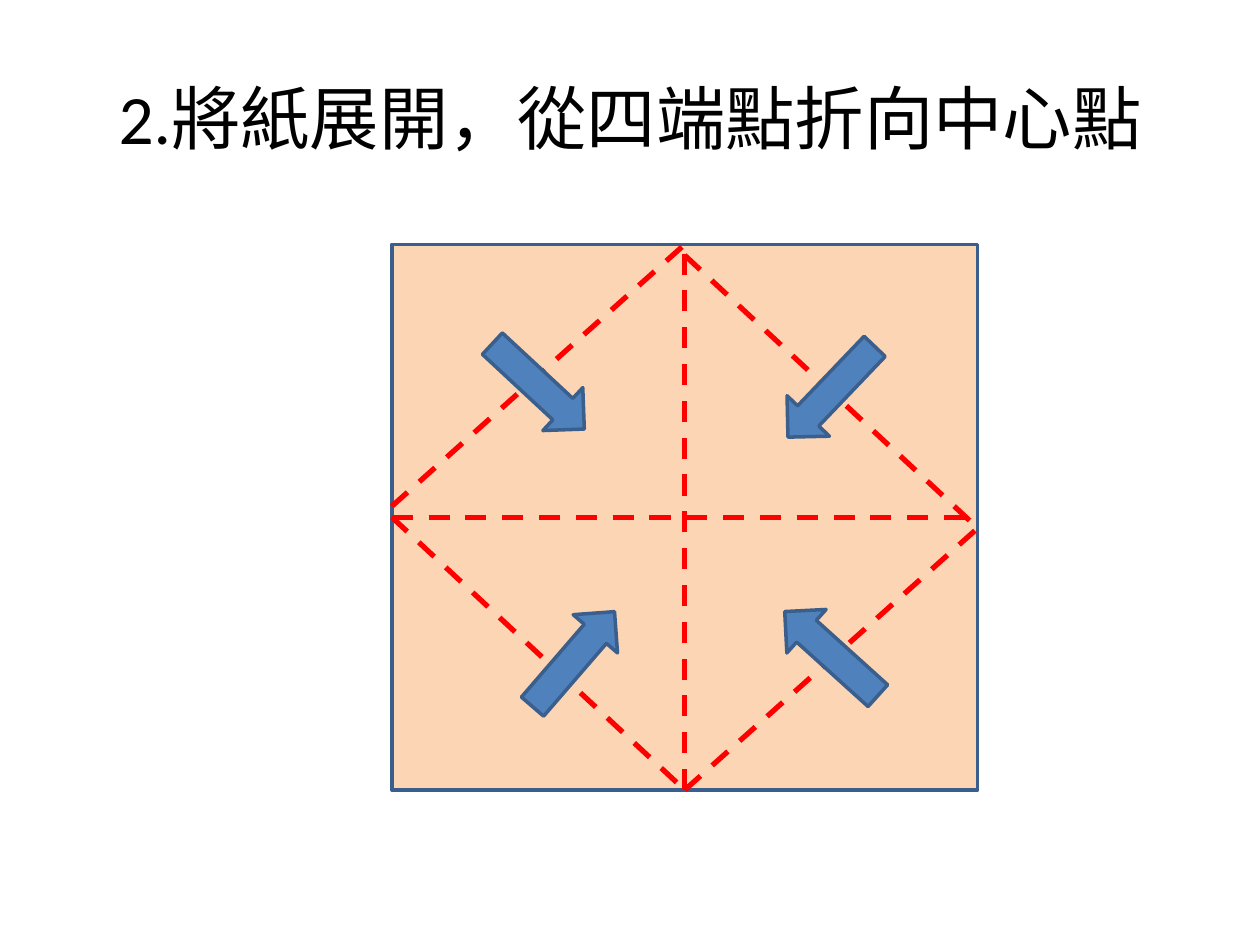
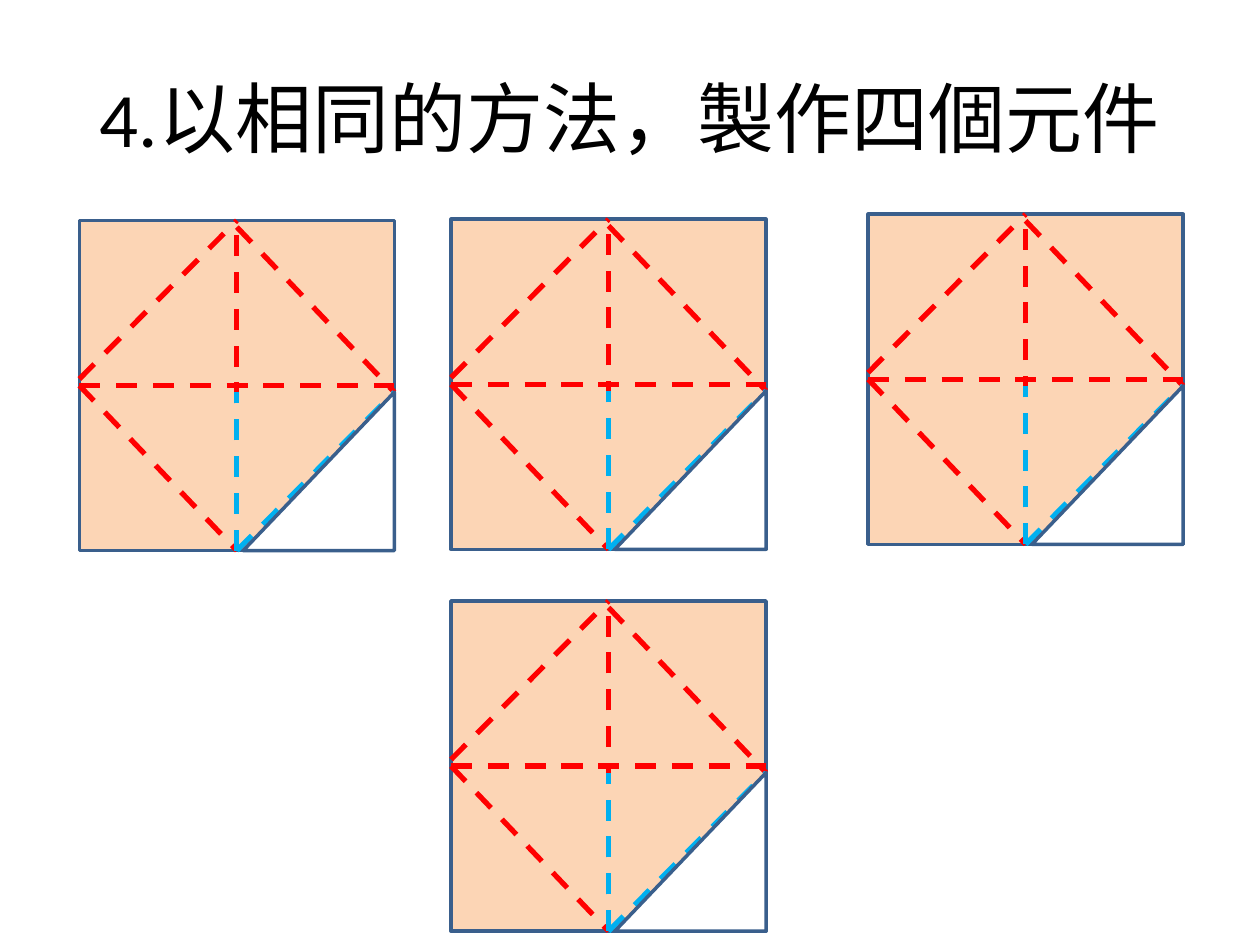
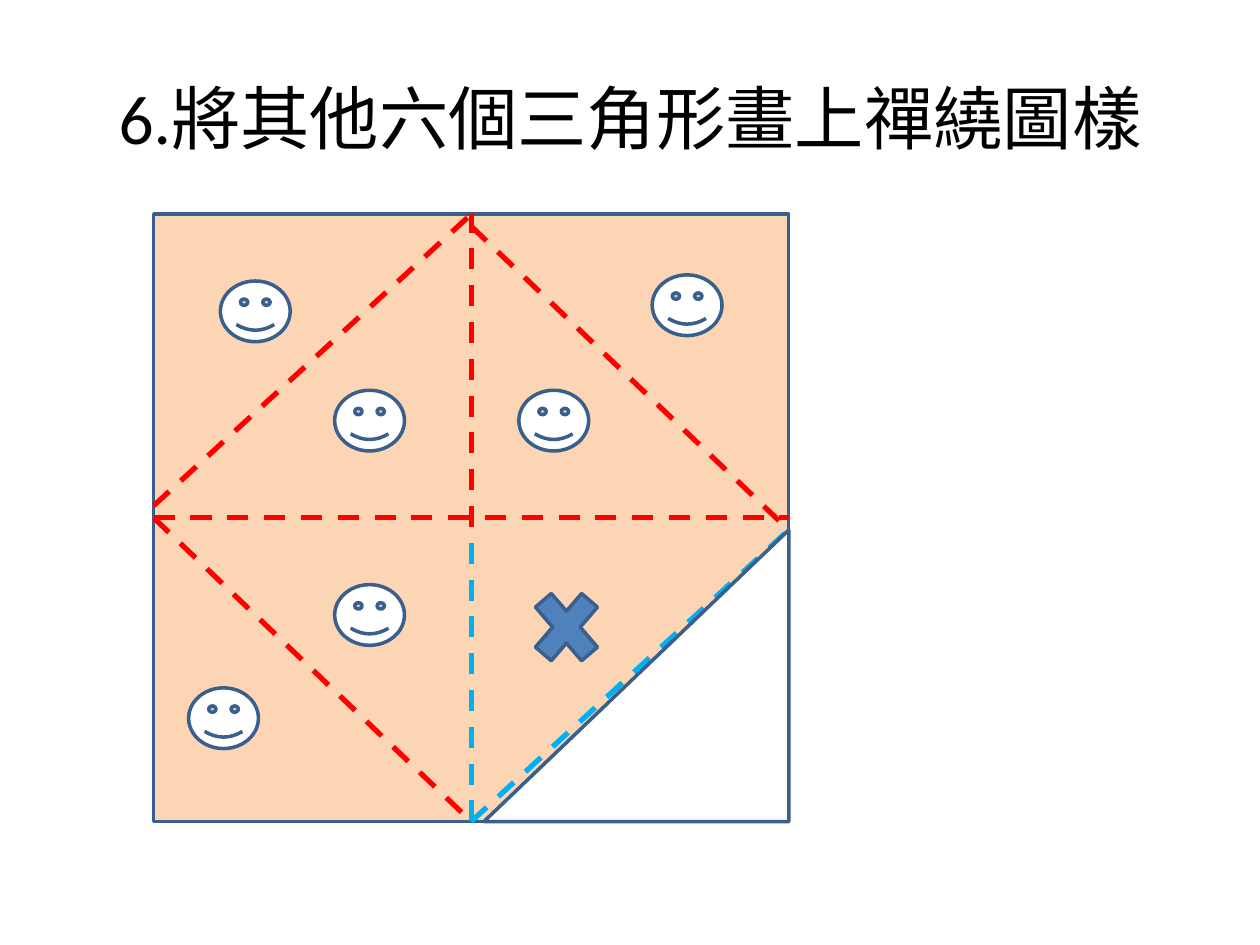
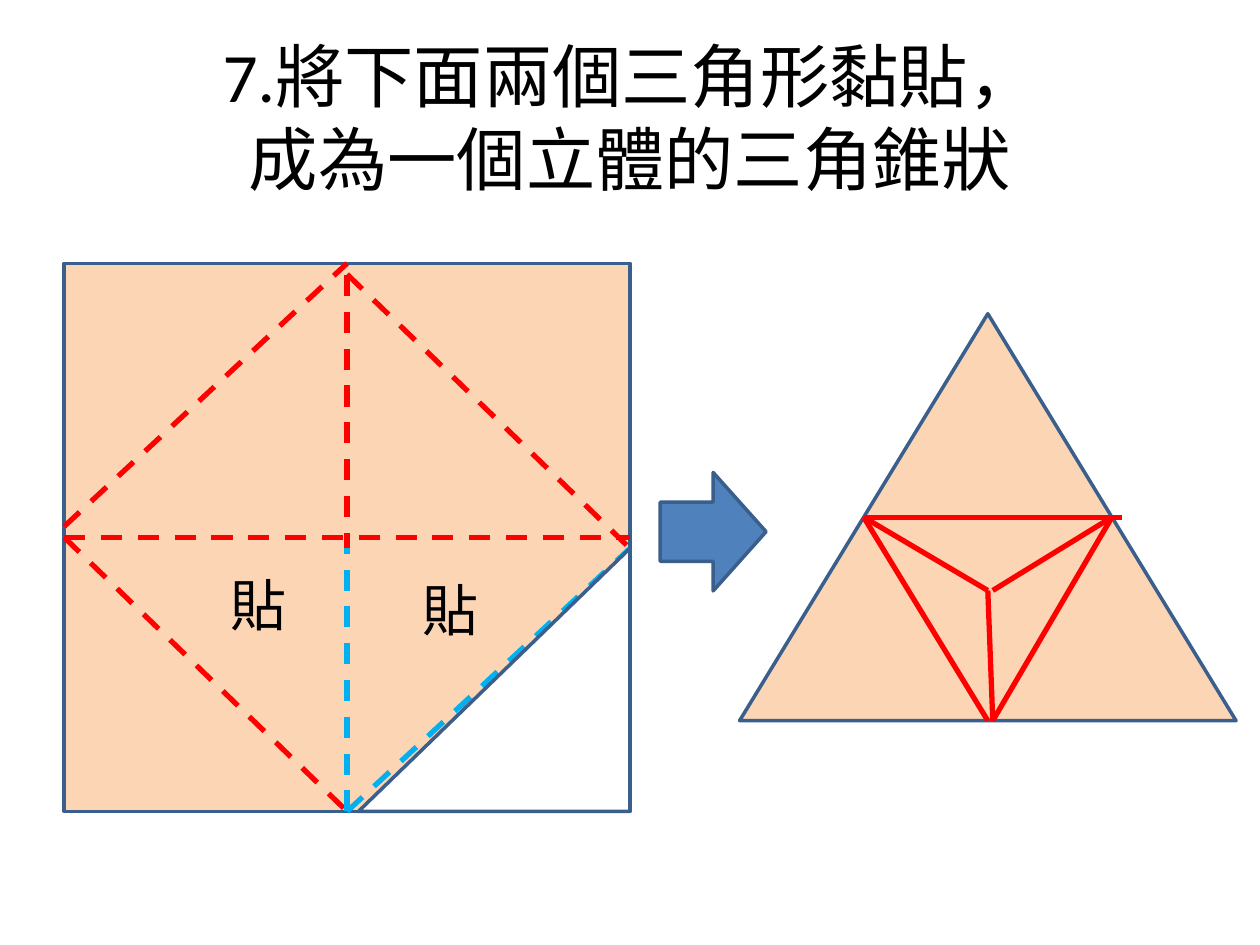
from dataclasses import dataclass

from lxml.etree import SubElement
from pptx import Presentation
from pptx.dml.color import RGBColor
from pptx.enum.dml import MSO_LINE
from pptx.enum.shapes import MSO_CONNECTOR, MSO_SHAPE
from pptx.enum.text import MSO_ANCHOR, MSO_AUTO_SIZE, PP_ALIGN
from pptx.oxml.ns import qn
from pptx.util import Inches, Pt

PEACH = RGBColor(0xFC, 0xD5, 0xB5)
BLUE = RGBColor(0x4F, 0x81, 0xBD)
OUTLINE = RGBColor(0x3A, 0x5F, 0x8C)
RED = RGBColor(0xFF, 0x00, 0x00)
SKY = RGBColor(0x00, 0xB0, 0xF0)
WHITE = RGBColor(0xFF, 0xFF, 0xFF)
BLACK = RGBColor(0x00, 0x00, 0x00)
FONT = "Calibri"
TITLE_ONLY = 5

# Fold lines as shares of the paper; folds stop a little off the middle
SHIFT = 0.02
LOW, HIGH = 0.5 - SHIFT, 0.5 + SHIFT
FOLDS = [
    ((0, 0.5), (1, 0.5)),
    ((0.5, 1), (0.5, 0)),
    ((0, 0.5), (0.5, 1)),
    ((0.5, SHIFT), (1, HIGH)),
    ((0, LOW), (0.5, 0)),
]
CORNER_FOLD = ((0.5, 1), (1, HIGH))
CUT = ((0.5, 1), (0.5, HIGH))


@dataclass
class Box:
    """An area in inches; its pieces are given as shares of it."""
    left: float
    top: float
    width: float
    height: float

    def point(self, across, down):
        return self.left + across * self.width, self.top + down * self.height

    def area(self, across, down, width, height):
        return Box(*self.point(across, down), width * self.width, height * self.height)

    def centred(self, across, down, width, height):
        return self.area(across - width / 2, down - height / 2, width, height)

    def turned(self):
        """The box that fills this one after a quarter turn."""
        inset = (self.width - self.height) / 2
        return Box(self.left + inset, self.top - inset, self.height, self.width)

    def emu(self):
        return [Inches(v) for v in (self.left, self.top, self.width, self.height)]


def style_font(font, size):
    for name, value in {"name": FONT, "size": Pt(size)}.items():
        setattr(font, name, value)
    font.color.rgb = BLACK


def add_outlined(parent, kind, box, fill, rotation=0):
    figure = parent.shapes.add_shape(kind, *box.emu())
    figure.rotation = rotation
    figure.shadow.inherit = False
    figure.fill.solid()
    figure.fill.fore_color.rgb = fill
    figure.line.color.rgb = OUTLINE
    figure.line.width = Pt(2)


def add_crease(parent, box, ends, color=RED, dash=MSO_LINE.DASH):
    start, end = (box.point(*share) for share in ends)
    crease = parent.shapes.add_connector(
        MSO_CONNECTOR.STRAIGHT, *(Inches(v) for v in (*start, *end)))
    crease.line.color.rgb = color
    for name, value in {"width": Pt(3), "dash_style": dash}.items():
        setattr(crease.line, name, value)
    SubElement(crease.element.spPr, qn("a:effectLst"))


def add_step(deck, title, size=39.6):
    slide = deck.slides.add_slide(deck.slide_layouts[TITLE_ONLY])
    heading = slide.shapes.title
    band = Box(0, 0, 10, 7.5).area(0.05, 0.04, 0.9, 1 / 6)
    for name, value in zip(("left", "top", "width", "height"), band.emu()):
        setattr(heading, name, value)
    frame = heading.text_frame
    frame.text = title
    frame.vertical_anchor = MSO_ANCHOR.MIDDLE
    paragraph = frame.paragraphs[0]
    paragraph.alignment = PP_ALIGN.CENTER
    for run in paragraph.runs:
        style_font(run.font, size)
    return slide


def add_paper(slide, box, corner_cut=True):
    """Square sheet with its folds, and the lower right corner cut if asked."""
    paper = slide.shapes.add_group_shape()
    add_outlined(paper, MSO_SHAPE.RECTANGLE, box, PEACH)
    for fold in FOLDS:
        add_crease(paper, box, fold)
    add_crease(paper, box, CORNER_FOLD, SKY if corner_cut else RED)
    if corner_cut:
        add_crease(paper, box, CUT, SKY)
        corner = box.area(HIGH, HIGH, LOW, LOW)
        add_outlined(paper, MSO_SHAPE.RIGHT_TRIANGLE, corner.turned(), WHITE, 270)
    return paper


def add_glue_label(paper, box):
    label = paper.shapes.add_textbox(*box.emu())
    frame = label.text_frame
    frame.word_wrap = True
    frame.auto_size = MSO_AUTO_SIZE.SHAPE_TO_FIT_TEXT
    frame.text = "貼"
    label.element.txBody.bodyPr.set("vert", "eaVert")
    style_font(frame.paragraphs[0].runs[0].font, 32)


def add_pyramid(slide, box):
    """Folded cone seen from above."""
    pyramid = slide.shapes.add_group_shape()
    add_outlined(pyramid, MSO_SHAPE.ISOSCELES_TRIANGLE, box, PEACH)
    left, right = (0.25, 0.5), (0.75, 0.5)
    foot, foot_right = (0.5, 1), (0.51, 1)
    peak, peak_right = (0.5, 0.68), (0.51, 0.68)
    for edge in [(left, (0.77, 0.5)), (left, foot), (foot_right, right),
                 (foot_right, peak), (peak, left), (peak_right, right)]:
        add_crease(pyramid, box, edge, dash=None)


def fold_to_centre(deck):
    slide = add_step(deck, "2.將紙展開，從四端點折向中心點")
    box = Box(3.11, 1.94, 4.65, 4.33)
    paper = add_paper(slide, box, corner_cut=False)
    # Arrows from the corners to the middle
    for across, down, rotation in [(0.75, 0.27, 43.7), (0.75, 0.75, 132.1),
                                   (0.31, 0.76, 220.8), (0.25, 0.26, 312.9)]:
        add_outlined(paper, MSO_SHAPE.DOWN_ARROW,
                     box.centred(across, down, 0.1, 0.23), BLUE, rotation)


def make_four(deck):
    slide = add_step(deck, "4.以相同的方法，製作四個元件", 44)
    for left, top in [(0.63, 1.75), (3.58, 1.74), (6.89, 1.7), (3.58, 4.77)]:
        add_paper(slide, Box(left, top, 2.5, 2.62))


def draw_patterns(deck):
    slide = add_step(deck, "6.將其他六個三角形畫上禪繞圖樣")
    box = Box(1.22, 1.7, 5.04, 4.82)
    add_paper(slide, box)
    # A face on each triangle to decorate, a cross on the one left blank
    for across, down in [(0.16, 0.16), (0.34, 0.34), (0.63, 0.34),
                         (0.84, 0.15), (0.11, 0.83), (0.34, 0.66)]:
        add_outlined(slide, MSO_SHAPE.SMILEY_FACE,
                     box.centred(across, down, 0.11, 0.1), WHITE)
    add_outlined(slide, MSO_SHAPE.MATH_MULTIPLY,
                 box.centred(0.65, 0.68, 0.14, 0.17), BLUE)


def glue_together(deck):
    slide = add_step(deck, "7.將下面兩個三角形黏貼，\v成為一個立體的三角錐狀")
    box = Box(0.51, 2.09, 4.49, 4.35)
    paper = add_paper(slide, box)
    for across, down in [(0.6, 0.56), (0.26, 0.55)]:
        add_glue_label(paper, box.area(across, down, 0.15, 0.16))
    # Result of the gluing
    add_outlined(slide, MSO_SHAPE.RIGHT_ARROW, Box(5.24, 3.75, 0.84, 0.94), BLUE)
    add_pyramid(slide, Box(5.87, 2.49, 3.94, 3.23))


def main():
    deck = Presentation()
    deck.slide_width, deck.slide_height = Inches(10), Inches(7.5)
    for build in (fold_to_centre, make_four, draw_patterns, glue_together):
        build(deck)
    deck.save("out.pptx")


if __name__ == "__main__":
    main()
